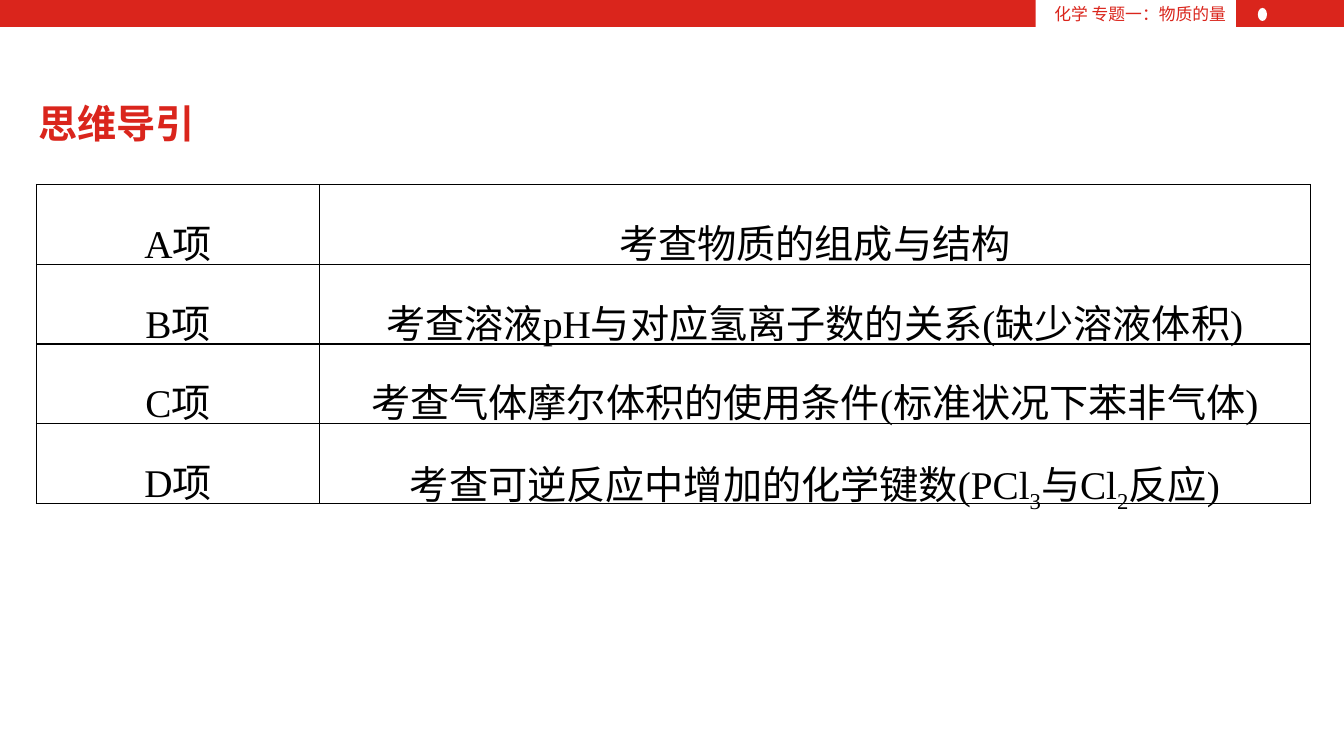
from lxml.etree import SubElement
from pptx import Presentation
from pptx.dml.color import RGBColor
from pptx.enum.shapes import MSO_SHAPE as Shape
from pptx.enum.text import MSO_ANCHOR as Anchor, MSO_AUTO_SIZE as AutoSize, PP_ALIGN as Align
from pptx.oxml.ns import qn
from pptx.util import Cm, Pt

RED, WHITE, BLACK = "DA251C", "FFFFFF", "000000"


def paint(color_format, color):
    color_format.rgb = RGBColor.from_string(color)


def style(para, size, color, align):
    para.alignment = align
    para.font.name = "Times New Roman"
    para.font.size = Pt(size)
    paint(para.font.color, color)


deck = Presentation()
deck.slide_width, deck.slide_height = Cm(33.87), Cm(19.05)
page = deck.slides.add_slide(deck.slide_layouts[5])

header = []
for kind, left, top, width, height, color in [
    (Shape.RECTANGLE, 0, 0, 33.87, 0.68, RED),
    (Shape.OVAL, 31.7, 0.2, 0.23, 0.33, WHITE),
    (Shape.RECTANGLE, 26.1, 0, 5.05, 0.68, WHITE),
]:
    part = page.shapes.add_shape(kind, Cm(left), Cm(top), Cm(width), Cm(height))
    part.shadow.inherit = False
    part.fill.solid()
    paint(part.fill.fore_color, color)
    part.line.fill.background()
    header.append(part)

label = header[-1].text_frame
label.vertical_anchor = Anchor.MIDDLE
label.text = "化学 专题一：物质的量"
style(label.paragraphs[0], 12, RED, Align.RIGHT)

title = page.shapes.title
title.left, title.top, title.width, title.height = Cm(0.71), Cm(2.36), Cm(4.5), Cm(1.45)
heading = title.text_frame
heading.text = "思维导引"
heading.word_wrap = False
heading.auto_size = AutoSize.NONE
heading.vertical_anchor = Anchor.MIDDLE
style(heading.paragraphs[0], 28, RED, Align.LEFT)
heading.paragraphs[0].font.bold = True

rows = [
    ("A项", "考查物质的组成与结构"),
    ("B项", "考查溶液pH与对应氢离子数的关系(缺少溶液体积)"),
    ("C项", "考查气体摩尔体积的使用条件(标准状况下苯非气体)"),
    ("D项", "考查可逆反应中增加的化学键数(PCl_3_与Cl_2_反应)"),
]
row_height = 2.01
column_widths = [7.13, 24.97]
table = page.shapes.add_table(
    len(rows), 2, Cm(0.92), Cm(4.65), Cm(sum(column_widths)), Cm(row_height * len(rows))
).table
table.first_row = table.horz_banding = False
for column, width in zip(table.columns, column_widths):
    column.width = Cm(width)

for row, texts in zip(table.rows, rows):
    row.height = Cm(row_height)
    for cell, text in zip(row.cells, texts):
        cell.margin_left = cell.margin_right = cell.margin_top = 0
        cell.margin_bottom = Cm(-0.27 if "_" in text else -0.14)
        cell.vertical_anchor = Anchor.MIDDLE
        properties = cell._tc.get_or_add_tcPr()
        for side in ("a:lnL", "a:lnR", "a:lnT", "a:lnB"):
            border = SubElement(properties, qn(side), w=str(Pt(1)))
            fill = SubElement(border, qn("a:solidFill"))
            SubElement(fill, qn("a:srgbClr"), val=BLACK)
        cell.fill.background()
        para = cell.text_frame.paragraphs[0]
        para.line_spacing = 1.5
        style(para, 28, BLACK, Align.CENTER)
        for index, piece in enumerate(text.split("_")):
            span = para.add_run()
            span.text = piece
            if index % 2:
                span._r.get_or_add_rPr().set("baseline", "-25000")

deck.save("out.pptx")
